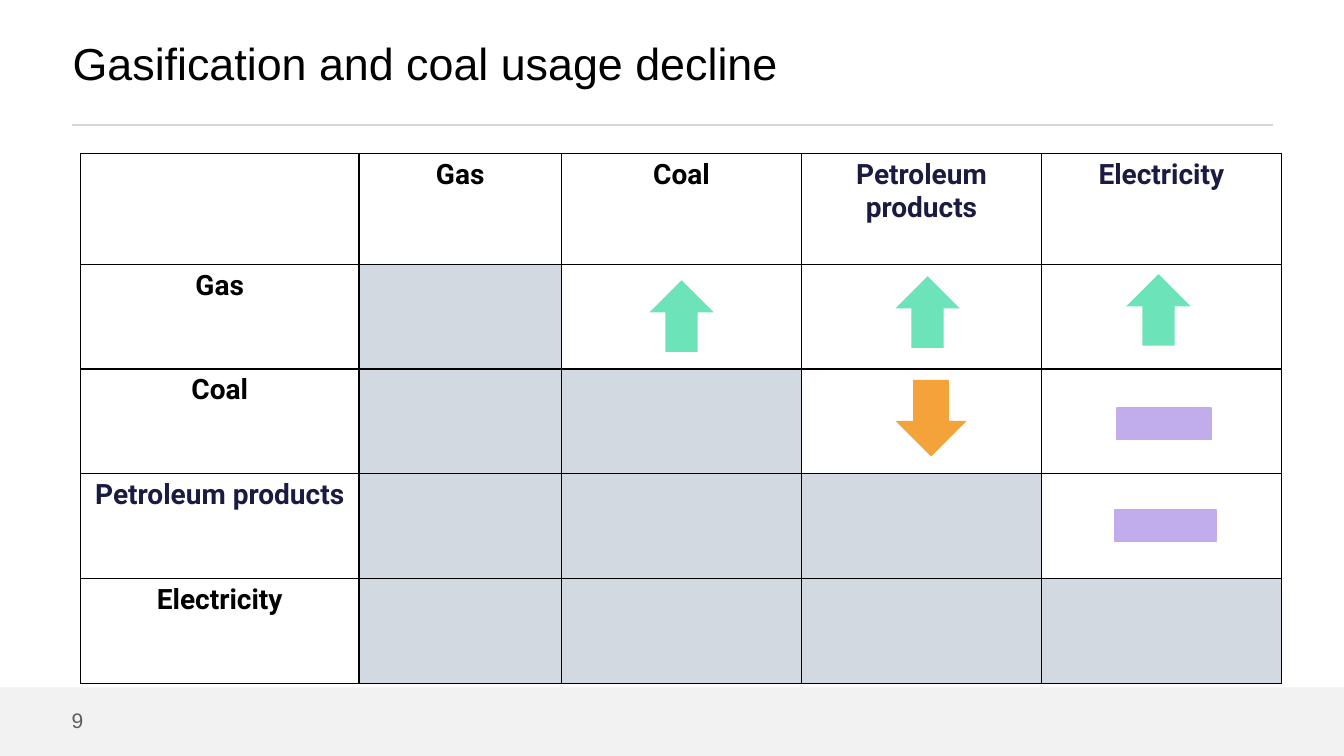
"""Build the slide on gasification and coal usage decline."""
from lxml.etree import SubElement
from pptx import Presentation
from pptx.dml.color import RGBColor
from pptx.enum.shapes import MSO_CONNECTOR, MSO_SHAPE
from pptx.enum.text import MSO_ANCHOR, PP_ALIGN
from pptx.oxml.ns import qn
from pptx.util import Inches, Pt

BLACK = RGBColor(0x00, 0x00, 0x00)
NAVY = RGBColor(0x1B, 0x1B, 0x42)
GREY_TEXT = RGBColor(0x5E, 0x5E, 0x5E)
RULE_GREY = RGBColor(0xD5, 0xD5, 0xD5)
FOOTER_GREY = RGBColor(0xF2, 0xF2, 0xF2)
CELL_GREY = RGBColor(0xD2, 0xD9, 0xE1)
GREEN = RGBColor(0x6C, 0xE3, 0xB9)
ORANGE = RGBColor(0xF4, 0xA3, 0x3A)
LILAC = RGBColor(0xC1, 0xAC, 0xEC)

TITLE = "Gasification and coal usage decline"
PAGE_NUMBER = "9"
FUELS = ["Gas", "Coal", "Petroleum products", "Electricity"]
COLUMN_COLORS = [BLACK, BLACK, NAVY, NAVY]
ROW_COLORS = [BLACK, BLACK, NAVY, BLACK]
COLUMN_WIDTHS = [2.76, 2.01, 2.38, 2.38, 2.38]
ROW_HEIGHTS = [1.1, 1.04, 1.04, 1.04, 1.04]
MATRIX_LEFT, MATRIX_TOP = 0.8, 1.52
MINUS_THICKNESS = 0.137

TRENDS = [
    (MSO_SHAPE.UP_ARROW, GREEN, 6.44, 2.78, 0.64, 0.71),
    (MSO_SHAPE.DOWN_ARROW, ORANGE, 8.88, 3.77, 0.71, 0.76),
    (MSO_SHAPE.UP_ARROW, GREEN, 8.88, 2.74, 0.64, 0.71),
    (MSO_SHAPE.UP_ARROW, GREEN, 11.17, 2.72, 0.64, 0.71),
    (MSO_SHAPE.MATH_MINUS, LILAC, 10.91, 3.07, 1.27, 2.27),
    (MSO_SHAPE.MATH_MINUS, LILAC, 10.88, 4.08, 1.36, 2.27),
]


def write(frame, text, *, size, color, font="Arial", bold=False, align=PP_ALIGN.LEFT):
    paragraph = frame.paragraphs[0]
    paragraph.alignment = align
    run = paragraph.add_run()
    run.text = text
    run.font.name = font
    run.font.size = Pt(size)
    run.font.bold = bold
    run.font.color.rgb = color


def add_label(slide, text, box, *, wrap=True, **style):
    frame = slide.shapes.add_textbox(*map(Inches, box)).text_frame
    frame.margin_left = frame.margin_right = 0
    frame.margin_top = frame.margin_bottom = 0
    frame.vertical_anchor = MSO_ANCHOR.MIDDLE
    frame.word_wrap = wrap
    write(frame, text, **style)


def add_filled(slide, preset, color, *box):
    shape = slide.shapes.add_shape(preset, *map(Inches, box))
    shape.shadow.inherit = False
    shape.fill.solid()
    shape.fill.fore_color.rgb = color
    shape.line.fill.background()
    return shape


def add_rule(slide):
    rule = slide.shapes.add_connector(
        MSO_CONNECTOR.STRAIGHT, Inches(0.71), Inches(1.24), Inches(12.63), Inches(1.24)
    )
    rule.line.color.rgb = RULE_GREY
    rule.line.width = Pt(1.5)
    SubElement(rule.line._get_or_add_ln().getparent(), qn("a:effectLst"))


def add_borders(cell):
    properties = cell._tc.get_or_add_tcPr()
    for side in ("a:lnL", "a:lnR", "a:lnT", "a:lnB"):
        border = SubElement(properties, qn(side), w=str(Pt(1)))
        SubElement(SubElement(border, qn("a:solidFill")), qn("a:srgbClr"), val=str(BLACK))


def add_matrix(slide):
    matrix = slide.shapes.add_table(
        len(ROW_HEIGHTS), len(COLUMN_WIDTHS), Inches(MATRIX_LEFT), Inches(MATRIX_TOP),
        Inches(sum(COLUMN_WIDTHS)), Inches(sum(ROW_HEIGHTS)),
    ).table
    matrix.first_row = matrix.horz_banding = False
    for column, width in zip(matrix.columns, COLUMN_WIDTHS):
        column.width = Inches(width)
    for row, height in zip(matrix.rows, ROW_HEIGHTS):
        row.height = Inches(height)
    for r in range(len(ROW_HEIGHTS)):
        for c in range(len(COLUMN_WIDTHS)):
            cell = matrix.cell(r, c)
            add_borders(cell)
            if 1 <= c <= r:
                cell.fill.solid()
                cell.fill.fore_color.rgb = CELL_GREY
            else:
                cell.fill.background()
    headings = {"font": "Roboto", "size": 20, "bold": True, "align": PP_ALIGN.CENTER}
    for i, fuel in enumerate(FUELS):
        write(matrix.cell(0, i + 1).text_frame, fuel, color=COLUMN_COLORS[i], **headings)
        write(matrix.cell(i + 1, 0).text_frame, fuel, color=ROW_COLORS[i], **headings)


def main():
    presentation = Presentation()
    presentation.slide_width, presentation.slide_height = Inches(13.33), Inches(7.5)
    slide = presentation.slides.add_slide(presentation.slide_layouts[6])
    add_rule(slide)
    add_filled(slide, MSO_SHAPE.RECTANGLE, FOOTER_GREY, 0, 6.82, 13.33, 0.68)
    add_label(slide, PAGE_NUMBER, (0.71, 7.02, 0.12, 0.25), wrap=False, size=15, color=GREY_TEXT)
    add_label(slide, TITLE, (0.72, 0, 10.07, 1.24), size=32, color=BLACK)
    add_matrix(slide)
    for preset, color, *box in TRENDS:
        trend = add_filled(slide, preset, color, *box)
        if preset == MSO_SHAPE.MATH_MINUS:
            trend.adjustments[0] = MINUS_THICKNESS
            trend.line.color.rgb = color
            trend.line.width = Pt(1)
    presentation.save("out.pptx")


if __name__ == "__main__":
    main()
